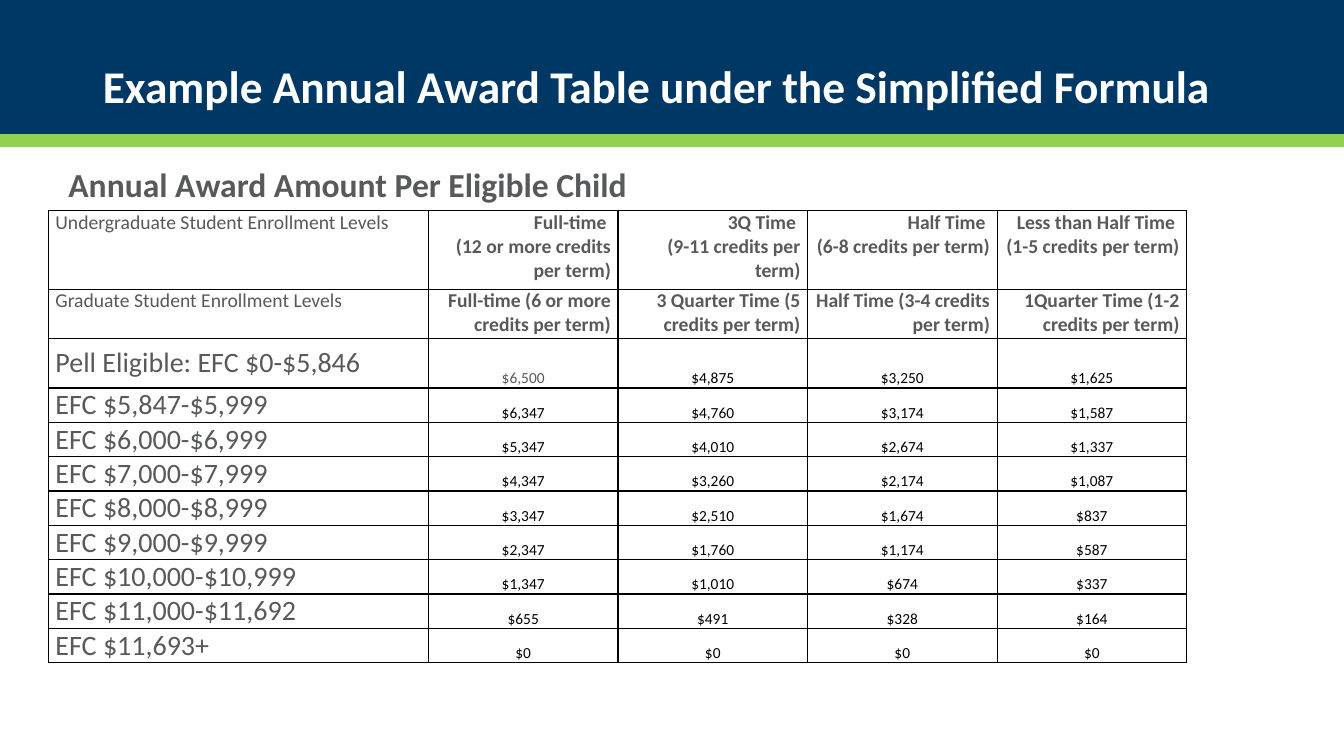
"""Build the slide with the example annual award table."""
from lxml.etree import SubElement
from pptx import Presentation
from pptx.dml.color import RGBColor
from pptx.enum.shapes import MSO_SHAPE
from pptx.enum.text import MSO_ANCHOR, PP_ALIGN
from pptx.oxml.ns import qn
from pptx.util import Inches, Pt

NAVY = RGBColor(0x00, 0x38, 0x65)
GREEN = RGBColor(0x92, 0xD0, 0x50)
GREY = RGBColor(0x58, 0x59, 0x5B)
WHITE = RGBColor(0xFF, 0xFF, 0xFF)
BLACK = RGBColor(0x00, 0x00, 0x00)

HEADERS = [
    ["Undergraduate Student Enrollment Levels",
     "Full-time \n(12 or more credits per term)",
     "3Q Time \n(9-11 credits per term)",
     "Half Time \n(6-8 credits per term)",
     "Less than Half Time \n(1-5 credits per term)"],
    ["Graduate Student Enrollment Levels",
     "Full-time (6 or more credits per term)",
     "3 Quarter Time (5 credits per term)",
     "Half Time (3-4 credits per term)",
     "1Quarter Time (1-2 credits per term)"],
]
FULL_AWARDS = {
    "Pell Eligible: EFC $0-$5,846": 6500,
    "EFC $5,847-$5,999": 6347,
    "EFC $6,000-$6,999": 5347,
    "EFC $7,000-$7,999": 4347,
    "EFC $8,000-$8,999": 3347,
    "EFC $9,000-$9,999": 2347,
    "EFC $10,000-$10,999": 1347,
    "EFC $11,000-$11,692": 655,
    "EFC $11,693+": 0,
}
ENROLLMENT_SHARES = [1, 0.75, 0.5, 0.25]
COLUMN_WIDTHS = [3.77] + [1.88] * 4
ROW_HEIGHTS = [0.78, 0.49, 0.49] + [0.32] * 8


def write_text(frame, text, size, color, bold=False, align=PP_ALIGN.LEFT):
    for number, line in enumerate(text.split("\n")):
        para = frame.add_paragraph() if number else frame.paragraphs[0]
        para.alignment = align
        span = para.add_run()
        span.text = line
        span.font.name = "Calibri"
        span.font.size = Pt(size)
        span.font.bold = bold
        span.font.color.rgb = color


def add_borders(cell):
    properties = cell._tc.get_or_add_tcPr()
    for position, side in enumerate(["a:lnL", "a:lnR", "a:lnT", "a:lnB"]):
        line = SubElement(properties, qn(side), w=str(Pt(1)))
        fill = SubElement(line, qn("a:solidFill"))
        SubElement(fill, qn("a:srgbClr"), val=str(BLACK))
        properties.insert(position, line)


deck = Presentation()
deck.slide_width = Inches(13.33)
deck.slide_height = Inches(7.5)
page = deck.slides.add_slide(deck.slide_layouts[5])

for top, height, color in [(0, 1.33, NAVY), (1.33, 0.13, GREEN)]:
    band = page.shapes.add_shape(MSO_SHAPE.RECTANGLE, 0, Inches(top),
                                 deck.slide_width, Inches(height))
    band.shadow.inherit = False
    band.fill.solid()
    band.fill.fore_color.rgb = color
    band.line.fill.background()

title = page.shapes.title
title.left, title.top = Inches(0.92), Inches(0.17)
title.width, title.height = Inches(11.5), Inches(1)
title.text_frame.vertical_anchor = MSO_ANCHOR.BOTTOM
title.text_frame.word_wrap = True
write_text(title.text_frame, "Example Annual Award Table under the Simplified Formula",
           size=32.4, color=WHITE, bold=True)
page.shapes._spTree.append(title._element)

rows = HEADERS + [
    [level] + [f"${int(award * share + 0.5):,}" for share in ENROLLMENT_SHARES]
    for level, award in FULL_AWARDS.items()
]
table = page.shapes.add_table(len(ROW_HEIGHTS), len(COLUMN_WIDTHS), Inches(0.48), Inches(2.09),
                              Inches(sum(COLUMN_WIDTHS)), Inches(sum(ROW_HEIGHTS))).table
table.horz_banding = False
for column, width in zip(table.columns, COLUMN_WIDTHS):
    column.width = Inches(width)
for row, height in zip(table.rows, ROW_HEIGHTS):
    row.height = Inches(height)

first_award_row = len(HEADERS)
for row_number, texts in enumerate(rows):
    for column_number, text in enumerate(texts):
        cell = table.cell(row_number, column_number)
        cell.fill.background()
        add_borders(cell)
        is_header = row_number < first_award_row
        is_amount = not is_header and column_number > 0
        cell.margin_left = cell.margin_right = Inches(0.01 if is_amount else 0.07)
        cell.margin_top = Inches(0.01 if is_amount else 0)
        cell.margin_bottom = 0
        if is_amount:
            cell.vertical_anchor = MSO_ANCHOR.BOTTOM
            is_first = (row_number, column_number) == (first_award_row, 1)
            write_text(cell.text_frame, text, size=11, color=GREY if is_first else BLACK,
                       align=PP_ALIGN.CENTER)
        elif is_header:
            write_text(cell.text_frame, text, size=14, color=GREY, bold=column_number > 0,
                       align=PP_ALIGN.RIGHT if column_number else PP_ALIGN.LEFT)
        else:
            write_text(cell.text_frame, text, size=20, color=GREY)
table.cell(first_award_row, 0).vertical_anchor = MSO_ANCHOR.MIDDLE

subtitle = page.shapes.add_textbox(Inches(0.58), Inches(1.58), Inches(12.08), Inches(0.5))
subtitle.text_frame.word_wrap = True
write_text(subtitle.text_frame, "Annual Award Amount Per Eligible Child",
           size=24, color=GREY, bold=True)

deck.save("out.pptx")
